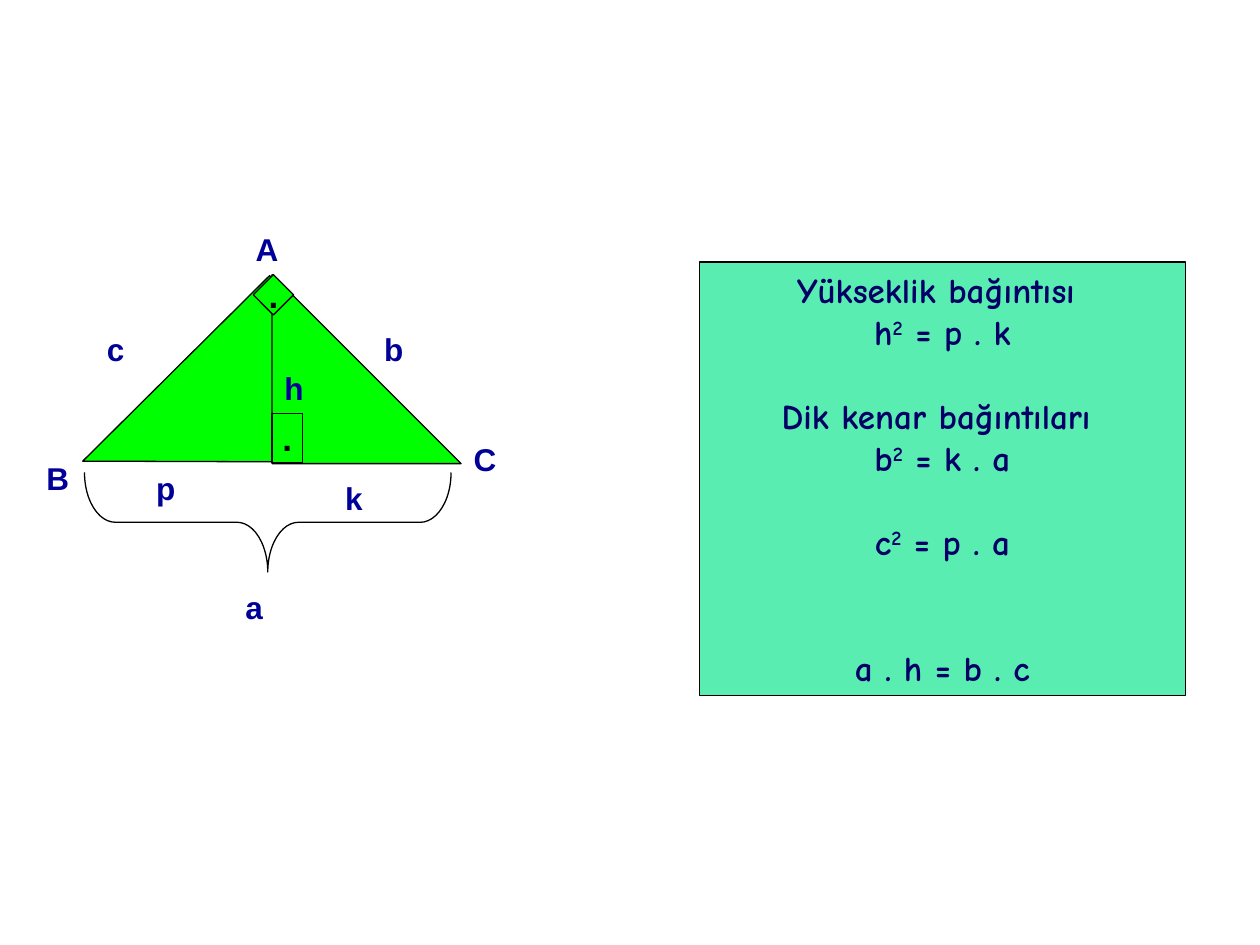
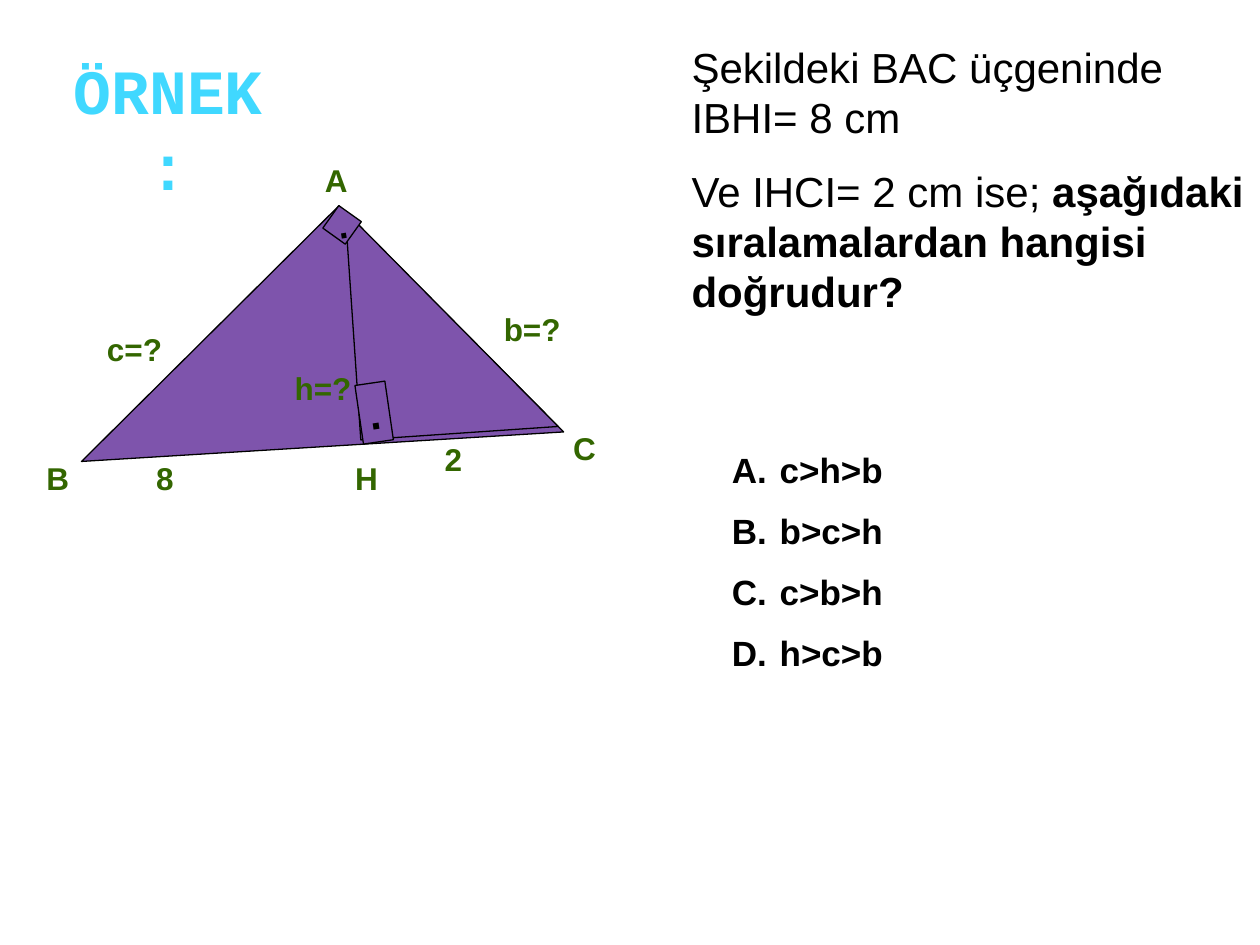
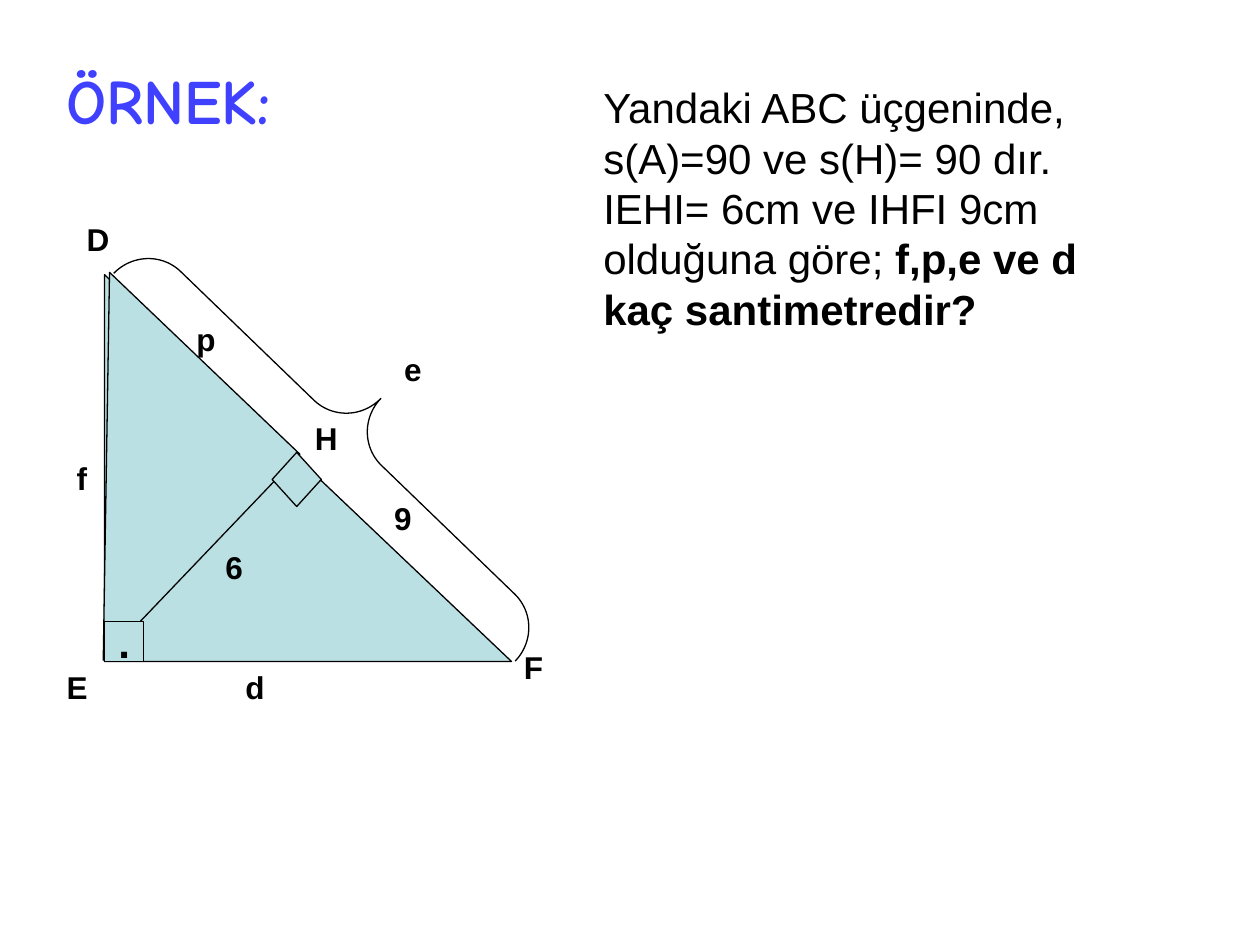
from lxml import etree
from pptx import Presentation
from pptx.dml.color import RGBColor
from pptx.enum.shapes import MSO_SHAPE
from pptx.enum.text import MSO_ANCHOR, MSO_AUTO_SIZE, PP_ALIGN
from pptx.oxml.ns import qn
from pptx.util import Inches, Pt

TRIANGLE = MSO_SHAPE.RIGHT_TRIANGLE
DIAMOND = MSO_SHAPE.DIAMOND
SQUARE = MSO_SHAPE.RECTANGLE
BRACE = MSO_SHAPE.RIGHT_BRACE
CENTER = PP_ALIGN.CENTER
MIDDLE = MSO_ANCHOR.MIDDLE

BODY_FONT = "Arial"
ROUND_FONT = "Comic Neue"
MONO_FONT = "Courier New"
BLACK = "000000"
LABEL_BLUE = "000099"
FORMULA_BLUE = "000066"
LABEL_GREEN = "336600"
LIME = "00FF00"
MINT = "59EDB1"
PURPLE = "7E54AC"
PALE_TEAL = "BBE0E3"
PARAGRAPH_GAP = 0.54


def color(hex_value):
    return RGBColor.from_string(hex_value)


def new_page(deck):
    return deck.slides.add_slide(deck.slide_layouts[6])


def style_paragraph(para, size, ink, font=BODY_FONT, bold=None):
    para.font.name = font
    para.font.size = Pt(size)
    para.font.bold = bold
    para.font.color.rgb = color(ink)


def add_figure(page, kind, place, fill=None, turn=0, dot_size=None):
    figure = page.shapes.add_shape(kind, *map(Inches, place))
    figure.shadow.inherit = False
    figure.rotation = turn
    figure.line.color.rgb = color(BLACK)
    figure.line.width = Pt(0.75)
    if fill:
        figure.fill.solid()
        figure.fill.fore_color.rgb = color(fill)
    else:
        figure.fill.background()
    if dot_size:
        frame = figure.text_frame
        frame.word_wrap = False
        frame.vertical_anchor = MIDDLE
        para = frame.paragraphs[0]
        para.text = "."
        para.alignment = CENTER
        style_paragraph(para, dot_size, BLACK, bold=True)
    return figure


def add_brace(page, place, turn, curve):
    brace = add_figure(page, BRACE, place, turn=turn)
    brace.adjustments[0] = curve
    brace.adjustments[1] = 0.5


def add_text_box(page, place, wrap=True):
    box = page.shapes.add_textbox(*map(Inches, place))
    box.text_frame.word_wrap = wrap
    return box.text_frame


def add_labels(page, ink, labels):
    for text, left, top, width in labels:
        para = add_text_box(page, (left, top, width, 0.4)).paragraphs[0]
        para.text = text
        style_paragraph(para, 18, ink, bold=True)


def add_title(page, top, font, ink):
    para = add_text_box(page, (0.35, top, 1.97, 0.57), wrap=False).paragraphs[0]
    para.alignment = CENTER
    span = para.add_run()
    span.text = "ÖRNEK:"
    span.font.name = font
    span.font.size = Pt(36)
    span.font.bold = True
    span.font.color.rgb = color(ink)
    tint = span.font._element.find(".//" + qn("a:srgbClr"))
    etree.SubElement(tint, qn("a:alpha"), val="75000")


def add_paragraphs(frame, count, size):
    for index in range(count):
        para = frame.add_paragraph() if index else frame.paragraphs[0]
        if index:
            para.space_before = Pt(round(size * PARAGRAPH_GAP, 1))
        yield para


def add_question(page, place, paragraphs):
    frame = add_text_box(page, place)
    for para, (plain, strong) in zip(add_paragraphs(frame, len(paragraphs), 24), paragraphs):
        style_paragraph(para, 24, BLACK)
        para.add_run().text = plain
        if strong:
            span = para.add_run()
            span.text = strong
            span.font.bold = True


def add_choices(page, place, choices):
    frame = add_text_box(page, place)
    for para, choice in zip(add_paragraphs(frame, len(choices), 20), choices):
        para.text = choice
        style_paragraph(para, 20, BLACK, bold=True)
        properties = para._p.get_or_add_pPr()
        properties.set("marL", str(Inches(0.38)))
        properties.set("indent", str(-Inches(0.38)))
        numbering = etree.Element(qn("a:buAutoNum"), type="alphaUcPeriod")
        properties.find(qn("a:defRPr")).addprevious(numbering)


def add_formula_panel(page, place, formulas):
    panel = add_figure(page, SQUARE, place, MINT)
    frame = panel.text_frame
    frame.word_wrap = True
    frame.auto_size = MSO_AUTO_SIZE.NONE
    frame.vertical_anchor = MIDDLE
    for index, (base, power, rest, gap) in enumerate(formulas):
        para = frame.add_paragraph() if index else frame.paragraphs[0]
        para.alignment = CENTER
        para.space_before = Pt(gap)
        style_paragraph(para, 20, FORMULA_BLUE, ROUND_FONT, True)
        para.add_run().text = base
        if power:
            span = para.add_run()
            span.text = power
            span.font._element.set("baseline", "30000")
            para.add_run().text = rest


def build_relations(deck):
    page = new_page(deck)
    add_figure(page, TRIANGLE, (1.09, 2.62, 2.09, 2.09), LIME, 135.2)
    add_figure(page, TRIANGLE, (2.16, 2.18, 1.5, 1.5), LIME)
    add_figure(page, DIAMOND, (2.01, 2.18, 0.32, 0.32), LIME, dot_size=20)
    add_figure(page, SQUARE, (2.16, 3.28, 0.24, 0.39), LIME, dot_size=20)
    add_brace(page, (1.73, 2.69, 0.79, 2.91), 90, 0.31)
    add_labels(page, LABEL_BLUE, [
        ("A", 1.93, 1.78, 0.39),
        ("B", 0.27, 3.59, 0.39),
        ("C", 3.66, 3.44, 0.39),
        ("h", 2.16, 2.88, 0.47),
        ("b", 2.95, 2.57, 0.47),
        ("c", 0.75, 2.57, 0.47),
        ("k", 2.64, 3.75, 0.47),
        ("p", 1.14, 3.67, 0.47),
        ("a", 1.85, 4.62, 0.47),
    ])
    add_formula_panel(page, (5.55, 2.08, 3.86, 3.44), [
        ("Yükseklik bağıntısı ", "", "", 0),
        ("h", "2", " = p . k", 0),
        ("Dik kenar bağıntıları ", "", "", 24),
        ("b", "2", " = k . a", 0),
        ("c", "2", " = p . a", 24),
        ("a . h = b . c", "", "", 48),
    ])


def build_ordering_example(deck):
    page = new_page(deck)
    add_figure(page, TRIANGLE, (1.12, 2.28, 2.88, 2.53), PURPLE, 135.2)
    add_figure(page, TRIANGLE, (2.8, 1.62, 1.57, 1.82), PURPLE, 356.1)
    add_figure(page, DIAMOND, (2.56, 1.63, 0.31, 0.31), PURPLE, 350.5, dot_size=20)
    add_figure(page, SQUARE, (2.85, 3.04, 0.24, 0.47), PURPLE, 351.7, dot_size=24)
    add_labels(page, LABEL_GREEN, [
        ("B", 0.27, 3.59, 0.39),
        ("C", 4.45, 3.36, 0.39),
        ("h=?", 2.24, 2.88, 0.71),
        ("b=?", 3.9, 2.41, 0.87),
        ("c=?", 0.75, 2.57, 0.79),
        ("2", 3.43, 3.44, 0.47),
        ("8", 1.14, 3.59, 0.71),
        ("A", 2.48, 1.23, 0.39),
        ("H", 2.72, 3.59, 0.39),
    ])
    add_title(page, 0.36, MONO_FONT, "00CCFF")
    add_question(page, (5.39, 0.28, 4.61, 2.3), [
        ("Şekildeki BAC üçgeninde IBHI= 8 cm", ""),
        ("Ve IHCI= 2 cm ise; ", "aşağıdaki sıralamalardan hangisi doğrudur?"),
    ])
    add_choices(page, (5.71, 3.51, 3.07, 1.93), ["c>h>b", "b>c>h", "c>b>h", "h>c>b"])


def build_length_example(deck):
    page = new_page(deck)
    add_figure(page, TRIANGLE, (0.83, 2.18, 3.23, 3.07), PALE_TEAL)
    add_figure(page, TRIANGLE, (-0.2, 2.57, 2.09, 2.26), PALE_TEAL, 223.7)
    add_figure(page, SQUARE, (0.83, 4.93, 0.31, 0.32), PALE_TEAL, dot_size=24)
    add_figure(page, DIAMOND, (2.14, 3.61, 0.43, 0.39), PALE_TEAL, 270)
    add_brace(page, (2.38, 1.22, 0.76, 4.43), 314, 0.49)
    add_labels(page, BLACK, [
        (text, left, top, 0.63) for text, left, top in [
            ("f", 0.51, 3.59),
            ("d", 1.85, 5.25),
            ("D", 0.59, 1.7),
            ("H", 2.4, 3.28),
            ("F", 4.06, 5.09),
            ("E", 0.43, 5.25),
            ("9", 3.03, 3.91),
            ("p", 1.46, 2.49),
            ("e", 3.11, 2.73),
            ("6", 1.69, 4.3),
        ]
    ])
    add_title(page, 0.44, ROUND_FONT, "0000FF")
    add_question(page, (4.69, 0.6, 4.57, 2.1), [
        ("Yandaki ABC üçgeninde, s(A)=90 ve s(H)= 90 dır. IEHI= 6cm ve IHFI 9cm "
         "olduğuna göre; ", "f,p,e ve d kaç santimetredir?"),
    ])


def main():
    deck = Presentation()
    deck.slide_width = Inches(10)
    deck.slide_height = Inches(7.5)
    build_relations(deck)
    build_ordering_example(deck)
    build_length_example(deck)
    deck.save("out.pptx")


if __name__ == "__main__":
    main()
